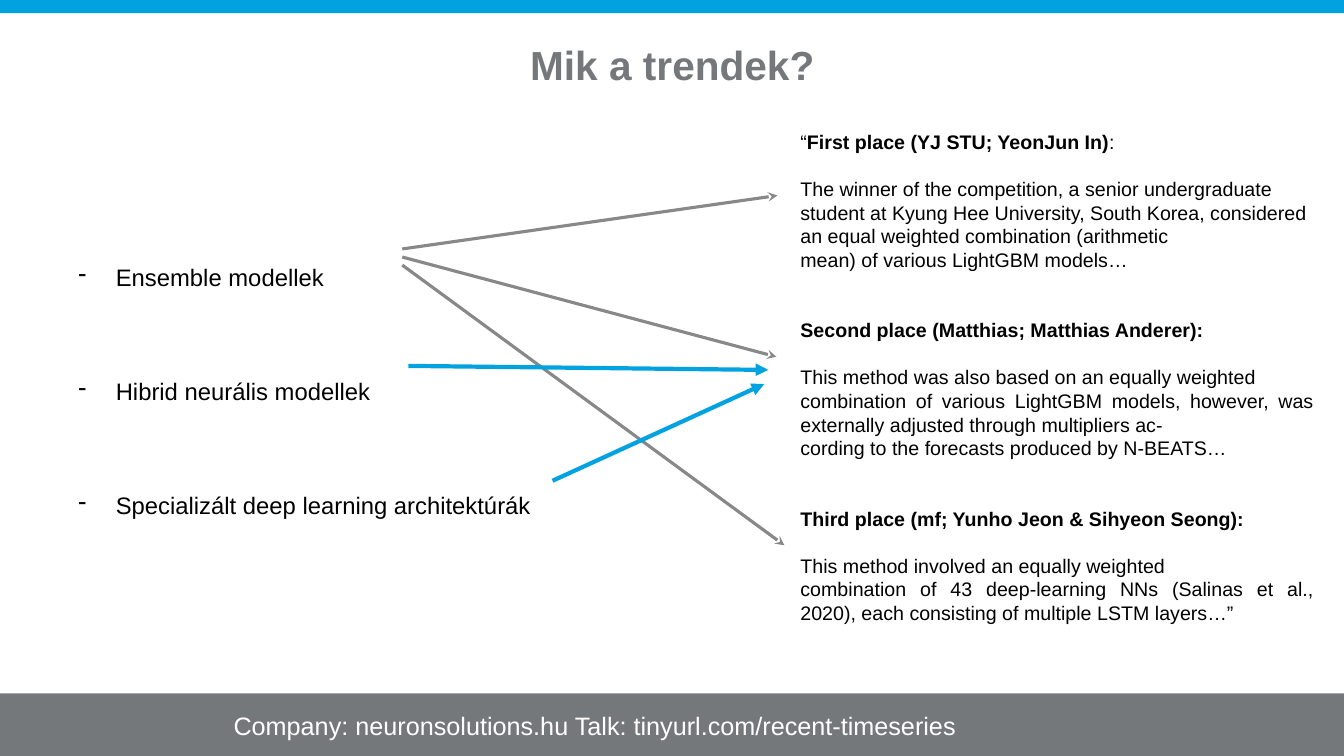
from lxml import etree
from pptx import Presentation
from pptx import util as u
from pptx.dml.color import RGBColor
from pptx.enum import shapes, text
from pptx.oxml.ns import qn

BLACK = RGBColor(0x00, 0x00, 0x00)
WHITE = RGBColor(0xFF, 0xFF, 0xFF)
SLATE = RGBColor(0x75, 0x78, 0x7B)
GRAY = RGBColor(0x88, 0x88, 0x88)
BLUE = RGBColor(0x00, 0xA3, 0xE0)

FONT = "Arial"
LINE_FACTOR = 1.2
LEFT, CENTER, JUSTIFY = text.PP_ALIGN.LEFT, text.PP_ALIGN.CENTER, text.PP_ALIGN.JUSTIFY

TRENDS = [
    "Ensemble modellek",
    "Hibrid neurális modellek",
    "Specializált deep learning architektúrák",
]

# Each place: heading runs as (text, bold), then body lines as (text, alignment)
PLACES = [
    ([("“", False), ("First place (YJ STU; YeonJun In)", True), (":", False)],
     [("The winner of the competition, a senior undergraduate", JUSTIFY),
      ("student at Kyung Hee University, South Korea, considered "
       "an equal weighted combination (arithmetic", LEFT),
      ("mean) of various LightGBM models…", JUSTIFY)]),
    ([("Second place (Matthias; Matthias Anderer):", True)],
     [("This method was also based on an equally weighted", JUSTIFY),
      ("combination of various LightGBM models, however, was "
       "externally adjusted through multipliers ac-", JUSTIFY),
      ("cording to the forecasts produced by N-BEATS…", JUSTIFY)]),
    ([("Third place (mf; Yunho Jeon & Sihyeon Seong):", True)],
     [("This method involved an equally weighted", JUSTIFY),
      ("combination of 43 deep-learning NNs (Salinas et al., "
       "2020), each consisting of multiple LSTM layers…”", JUSTIFY)]),
]

# Start, end
ENSEMBLE_ARROWS = [
    ((3.99, 2.47), (7.71, 1.94)),
    ((3.99, 2.55), (7.7, 3.54)),
    ((3.99, 2.63), (7.78, 5.41)),
]
NEURAL_ARROWS = [
    ((4.05, 3.63), (7.62, 3.67)),
    ((5.48, 4.77), (7.58, 3.81)),
]


def add_band(slide, top, height, color):
    band = slide.shapes.add_shape(shapes.MSO_SHAPE.RECTANGLE, u.Inches(0),
                                  u.Inches(top), u.Inches(13.33), u.Inches(height))
    band.shadow.inherit = False
    band.fill.solid()
    band.fill.fore_color.rgb = color
    band.line.fill.background()
    return band


def add_text_frame(slide, left, top, width, height, inset):
    box = slide.shapes.add_textbox(*map(u.Inches, (left, top, width, height)))
    frame = box.text_frame
    frame.word_wrap = True
    frame.margin_left = frame.margin_right = u.Inches(inset)
    frame.margin_top = frame.margin_bottom = u.Inches(inset)
    return frame


def add_paragraph(frame, runs, size, color, alignment=LEFT, lines=1, gap=0):
    """Write (text, bold) runs; lines is the line spacing, gap the lines left free above."""
    first = frame.paragraphs[0]
    paragraph = frame.add_paragraph() if first.runs else first
    paragraph.alignment = alignment
    line_height = size * LINE_FACTOR * lines
    paragraph.line_spacing = u.Pt(line_height)
    if gap:
        paragraph.space_before = u.Pt(line_height * gap)
    for content, bold in runs:
        run = paragraph.add_run()
        run.text = content
        run.font.name = FONT
        run.font.size = u.Pt(size)
        run.font.bold = bold
        run.font.color.rgb = color
    return paragraph


def add_dash(paragraph):
    properties = paragraph._p.get_or_add_pPr()
    properties.set("marL", str(u.Inches(0.5)))
    properties.set("indent", str(u.Inches(-0.37)))
    etree.SubElement(properties, qn("a:buChar")).set("char", "-")


def add_arrow(slide, start, end, color, width, head):
    arrow = slide.shapes.add_connector(shapes.MSO_CONNECTOR.STRAIGHT,
                                       *map(u.Inches, start + end))
    arrow.line.color.rgb = color
    arrow.line.width = u.Pt(width)
    etree.SubElement(arrow.line._get_or_add_ln(), qn("a:tailEnd")).set("type", head)
    etree.SubElement(arrow._element.spPr, qn("a:effectLst"))


def add_trends(slide):
    frame = add_text_frame(slide, 0.55, 2.22, 5.47, 2.78, 0.1)
    for index, trend in enumerate(TRENDS):
        add_dash(add_paragraph(frame, [(trend, False)], 17, BLACK,
                               lines=2, gap=min(index, 1)))


def add_places(slide):
    frame = add_text_frame(slide, 7.84, 1.19, 5.29, 5.39, 0.1)
    for place, (heading, body) in enumerate(PLACES):
        add_paragraph(frame, heading, 14, BLACK, JUSTIFY, gap=2 if place else 0)
        for row, (content, alignment) in enumerate(body):
            add_paragraph(frame, [(content, False)], 14, BLACK, alignment,
                          gap=0 if row else 1)


def main():
    presentation = Presentation()
    presentation.slide_width = u.Inches(13.33)
    presentation.slide_height = u.Inches(7.5)
    slide = presentation.slides.add_slide(presentation.slide_layouts[6])

    # Footer and top band
    footer = add_band(slide, 6.88, 0.64, SLATE).text_frame
    footer.vertical_anchor = text.MSO_ANCHOR.MIDDLE
    footer.margin_right = u.Inches(1.63)
    add_paragraph(footer, [("Company: neuronsolutions.hu Talk: "
                            "tinyurl.com/recent-timeseries", False)], 18, WHITE, CENTER)
    add_band(slide, -0.01, 0.14, BLUE)

    # Title
    title = add_text_frame(slide, 0.63, 0.4, 12.08, 0.79, 0)
    add_paragraph(title, [("Mik a trendek?", True)], 29, SLATE, CENTER)

    # Competition results and trends
    add_places(slide)
    add_trends(slide)

    # Links from trends to winners
    for start, end in ENSEMBLE_ARROWS:
        add_arrow(slide, start, end, GRAY, 2.25, "stealth")
    for start, end in NEURAL_ARROWS:
        add_arrow(slide, start, end, BLUE, 3, "triangle")

    presentation.save("out.pptx")


if __name__ == "__main__":
    main()
